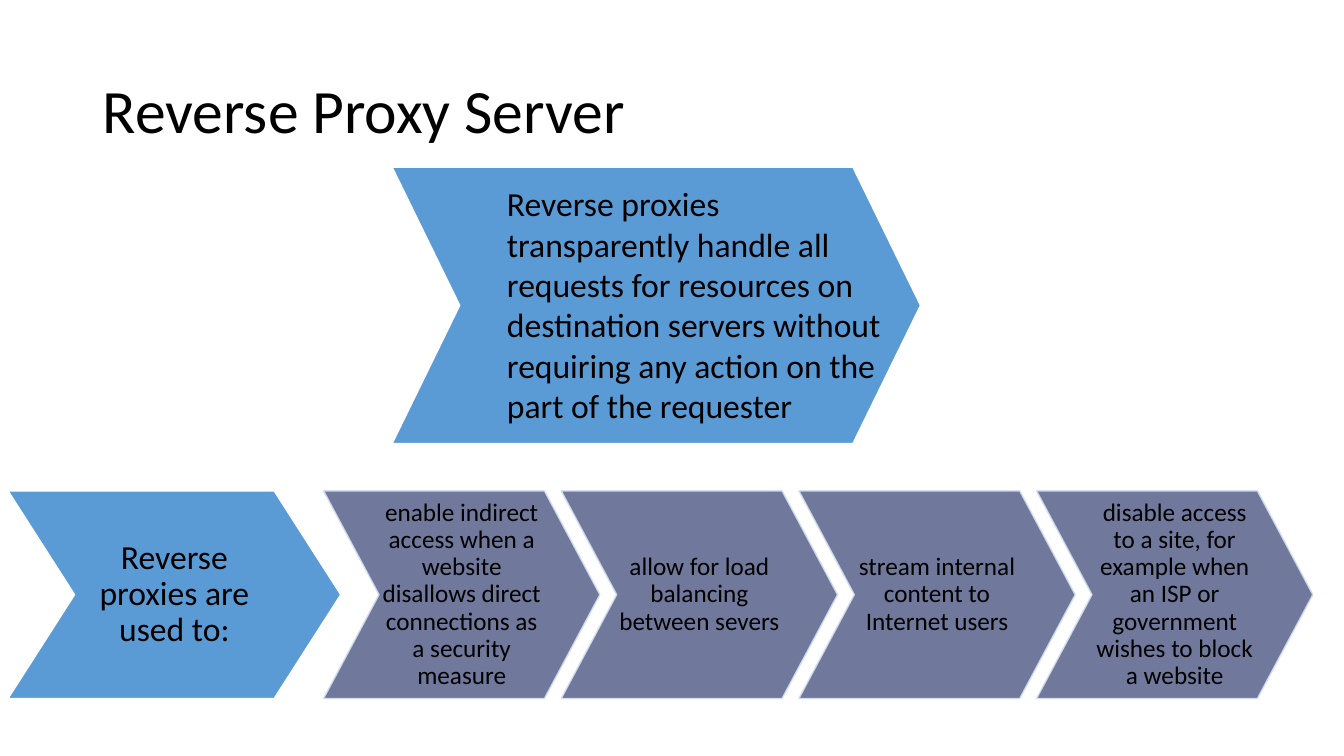
from lxml.etree import SubElement
from pptx import Presentation
from pptx.dml.color import RGBColor
from pptx.enum.shapes import MSO_SHAPE
from pptx.enum.text import MSO_ANCHOR, MSO_AUTO_SIZE, PP_ALIGN
from pptx.oxml.ns import qn
from pptx.util import Inches, Pt

BLACK = RGBColor(0x00, 0x00, 0x00)
WHITE = RGBColor(0xFF, 0xFF, 0xFF)
BLUE = RGBColor(0x5B, 0x9B, 0xD5)
SLATE = RGBColor(0x61, 0x6B, 0x91)
PALE_BLUE = RGBColor(0xD2, 0xDE, 0xEF)

FONT = "Calibri"
ROW_TOP, ROW_HEIGHT = 4.87, 2.06
USE_LEFT, USE_WIDTH, USE_STEP = 3.21, 2.74, 2.357

DEFINITION = (
    "Reverse proxies transparently handle all requests for resources on "
    "destination servers without requiring any action on the part of the requester"
)
USES = [
    "enable indirect access when a website disallows direct connections "
    "as a security measure",
    "allow for load balancing between severs",
    "stream internal content to Internet users",
    "disable access to a site, for example when an ISP or government "
    "wishes to block a website",
]


def write(frame, text, size, align=PP_ALIGN.LEFT, spacing=0.9):
    paragraph = frame.paragraphs[0]
    paragraph.alignment = align
    paragraph.line_spacing = spacing
    run = paragraph.add_run()
    run.text = text
    run.font.name = FONT
    run.font.size = Pt(size)
    run.font.color.rgb = BLACK


def set_opacity(fill_format, percent):
    """Add an alpha value to each solid colour below the given element."""
    for color in fill_format.iter(qn("a:srgbClr")):
        SubElement(color, qn("a:alpha")).set("val", str(percent * 1000))


def add_chevron(slide, left, top, width, height, point, fill, line):
    """Add a chevron whose tip is `point` inches long."""
    chevron = slide.shapes.add_shape(
        MSO_SHAPE.CHEVRON, Inches(left), Inches(top), Inches(width), Inches(height)
    )
    chevron.adjustments[0] = point / height
    chevron.shadow.inherit = False
    chevron.fill.solid()
    chevron.fill.fore_color.rgb = fill
    chevron.line.color.rgb = line
    chevron.line.width = Pt(1)
    return chevron


def label_chevron(chevron, text, size, side_margin):
    frame = chevron.text_frame
    frame.word_wrap = True
    frame.vertical_anchor = MSO_ANCHOR.MIDDLE
    frame.margin_left = frame.margin_right = Inches(side_margin)
    frame.margin_top = frame.margin_bottom = Inches(0.01)
    write(frame, text, size, PP_ALIGN.CENTER)


def add_title(slide, text):
    title = slide.shapes.title
    title.left, title.top = Inches(0.92), Inches(0.4)
    title.width, title.height = Inches(11.5), Inches(1.45)
    title.text_frame.auto_size = MSO_AUTO_SIZE.NONE
    title.text_frame.vertical_anchor = MSO_ANCHOR.MIDDLE
    write(title.text_frame, text, 44)


def add_definition(slide):
    add_chevron(slide, 3.89, 1.66, 5.24, 2.74, 0.67, BLUE, WHITE)
    definition = slide.shapes.add_textbox(
        Inches(4.93), Inches(1.77), Inches(4.01), Inches(2.52)
    )
    definition.text_frame.word_wrap = True
    definition.text_frame.auto_size = MSO_AUTO_SIZE.SHAPE_TO_FIT_TEXT
    write(definition.text_frame, DEFINITION, 24, spacing=1.0)


def add_uses(slide):
    lead = add_chevron(slide, 0.08, ROW_TOP, 3.3, ROW_HEIGHT, 0.66, BLUE, WHITE)
    label_chevron(lead, "Reverse proxies are used to:", 24, 0)
    for index, use in enumerate(USES):
        step = add_chevron(
            slide, USE_LEFT + index * USE_STEP, ROW_TOP, USE_WIDTH, ROW_HEIGHT,
            0.55, SLATE, PALE_BLUE,
        )
        set_opacity(step.element.spPr, 90)
        label_chevron(step, use, 18, 0.01)


def main():
    deck = Presentation()
    deck.slide_width, deck.slide_height = Inches(13.33), Inches(7.5)
    slide = deck.slides.add_slide(deck.slide_layouts[5])
    add_title(slide, "Reverse Proxy Server")
    add_uses(slide)
    add_definition(slide)
    deck.save("out.pptx")


if __name__ == "__main__":
    main()
